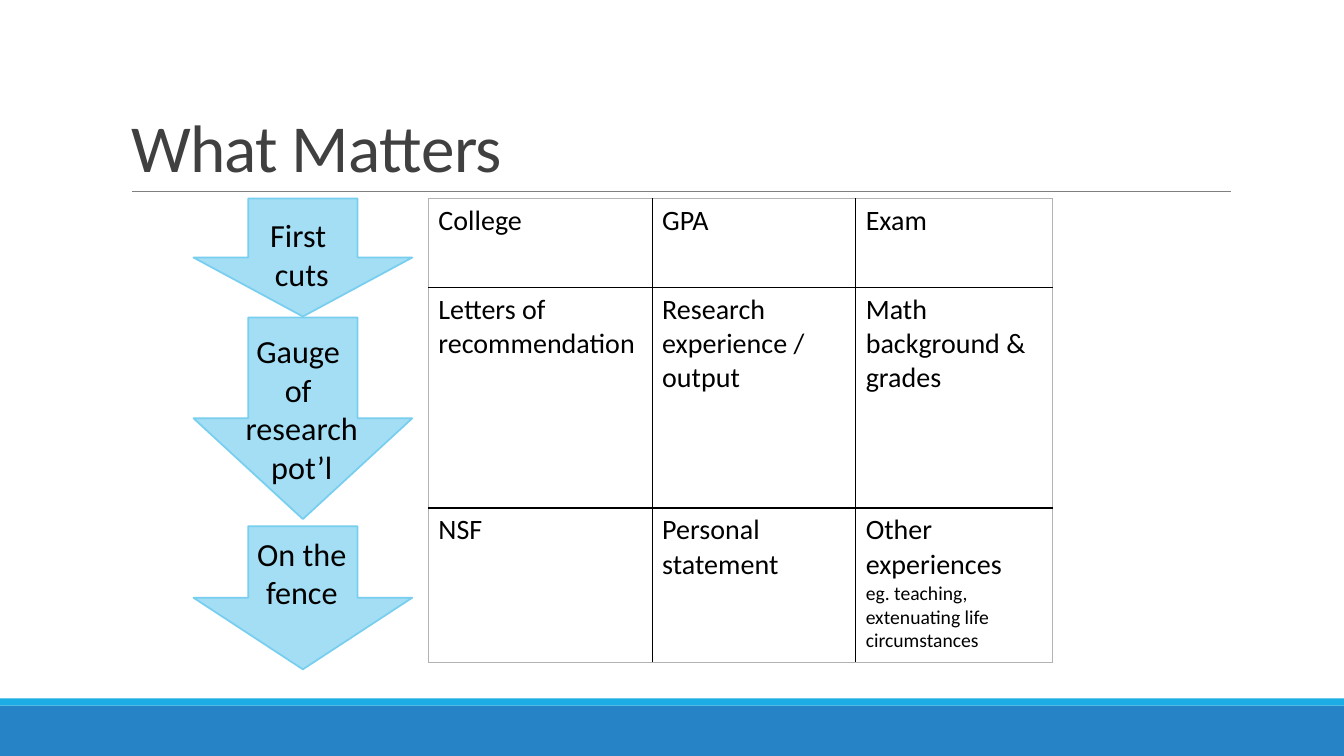
from lxml import etree
from pptx import Presentation
from pptx import util as u
from pptx.dml.color import RGBColor
from pptx.enum import shapes, text
from pptx.oxml.ns import qn

PX = 9144  # 100 px to the inch
FONT = "Calibri"
BLACK = "000000"

STAGES = [  # arrow top, arrow height, label top, label height, label lines
    (197, 117, 209, 88, ["First ", "cuts"]),
    (315, 200, 324, 165, ["Gauge ", "of ", "research", "pot’l"]),
    (522, 142, 525, 126, ["On the", "fence"]),
]
COLUMNS = [222, 202, 195]
ROWS = [88, 219, 153]
CRITERIA = [
    ["College", "GPA", "Exam"],
    ["Letters of recommendation", "Research experience / output",
     "Math background & grades"],
    ["NSF", "Personal statement", "Other experiences"],
]
EXAMPLES = "eg. teaching, extenuating life circumstances"


def px(n):
    return u.Emu(n * PX)


def box(*lengths):
    return [px(n) for n in lengths]


def rgb(color):
    return RGBColor.from_string(color)


def add_run(p, words, size, color=BLACK):
    r = p.add_run()
    r.text = words
    r.font.name = FONT
    r.font.size = u.Pt(size)
    r.font.color.rgb = rgb(color)
    return r


def add_preset(s, kind, place, fill, line=None):
    sp = s.shapes.add_shape(kind, *box(*place))
    sp.shadow.inherit = False
    sp.fill.solid()
    sp.fill.fore_color.rgb = rgb(fill)
    if line:
        sp.line.color.rgb = rgb(line)
        sp.line.width = u.Pt(1.25)
    else:
        sp.line.fill.background()


def add_rule(s, x1, x2, y):
    line = s.shapes.add_connector(shapes.MSO_CONNECTOR.STRAIGHT,
                                  *box(x1, y, x2, y))
    line.line.color.rgb = rgb("808080")
    line.line.width = u.Pt(0.5)
    etree.SubElement(line._element.spPr, qn("a:effectLst"))


def set_title(s, words):
    title = s.shapes.title
    title.left, title.top, title.width, title.height = box(120, 31, 1100, 159)
    tf = title.text_frame
    tf.word_wrap = True
    tf.auto_size = text.MSO_AUTO_SIZE.NONE
    tf.vertical_anchor = text.MSO_ANCHOR.BOTTOM
    p = tf.paragraphs[0]
    p.alignment = text.PP_ALIGN.LEFT
    p.line_spacing = 0.85
    r = add_run(p, words, 48, "404040")
    r.font._element.set("spc", "-50")


def add_label(s, place, lines):
    tf = s.shapes.add_textbox(*box(*place)).text_frame
    tf.word_wrap = True
    for i, line in enumerate(lines):
        p = tf.add_paragraph() if i else tf.paragraphs[0]
        p.alignment = text.PP_ALIGN.CENTER
        add_run(p, line, 23)


def set_borders(cell, outer):
    """Black lines between cells, thin grey ones on the table's outer sides."""
    tcPr = cell._tc.get_or_add_tcPr()
    for i, side in enumerate(("lnL", "lnR", "lnT", "lnB")):
        color, width = ("B2B2B2", 0.5) if side in outer else (BLACK, 1)
        ln = etree.Element(qn("a:" + side), w=str(u.Pt(width)))
        fill = etree.SubElement(ln, qn("a:solidFill"))
        etree.SubElement(fill, qn("a:srgbClr"), val=color)
        tcPr.insert(i, ln)


def add_criteria(s):
    place = box(425, 197, sum(COLUMNS), sum(ROWS))
    table = s.shapes.add_table(len(ROWS), len(COLUMNS), *place).table
    table.first_row = table.horz_banding = False
    for column, width in zip(table.columns, COLUMNS):
        column.width = px(width)
    for i, (row, height) in enumerate(zip(table.rows, ROWS)):
        row.height = px(height)
        for j, cell in enumerate(row.cells):
            cell.fill.background()
            edges = {"lnL": j == 0, "lnR": j == len(COLUMNS) - 1,
                     "lnT": i == 0, "lnB": i == len(ROWS) - 1}
            set_borders(cell, [side for side, on in edges.items() if on])
            add_run(cell.text_frame.paragraphs[0], CRITERIA[i][j], 20)
    add_run(table.cell(2, 2).text_frame.add_paragraph(), EXAMPLES, 14)


def main():
    prs = Presentation()
    prs.slide_width, prs.slide_height = u.Emu(12192000), px(750)
    s = prs.slides.add_slide(prs.slide_layouts[5])

    # Footer bands and the rule under the title
    preset = shapes.MSO_SHAPE
    add_preset(s, preset.RECTANGLE, (0, 700, 1334, 50), "2683C6")
    add_preset(s, preset.RECTANGLE, (0, 693, 1334, 7), "1CADE4")
    add_rule(s, 131, 1221, 190)

    # Title and table
    set_title(s, "What Matters")
    add_criteria(s)

    # Selection stages
    for top, height, label_top, label_height, lines in STAGES:
        add_preset(s, preset.DOWN_ARROW, (192, top, 217, height),
                   "A4DEF4", "77CEEF")
        add_label(s, (208, label_top, 183, label_height), lines)

    prs.save("out.pptx")


if __name__ == "__main__":
    main()
